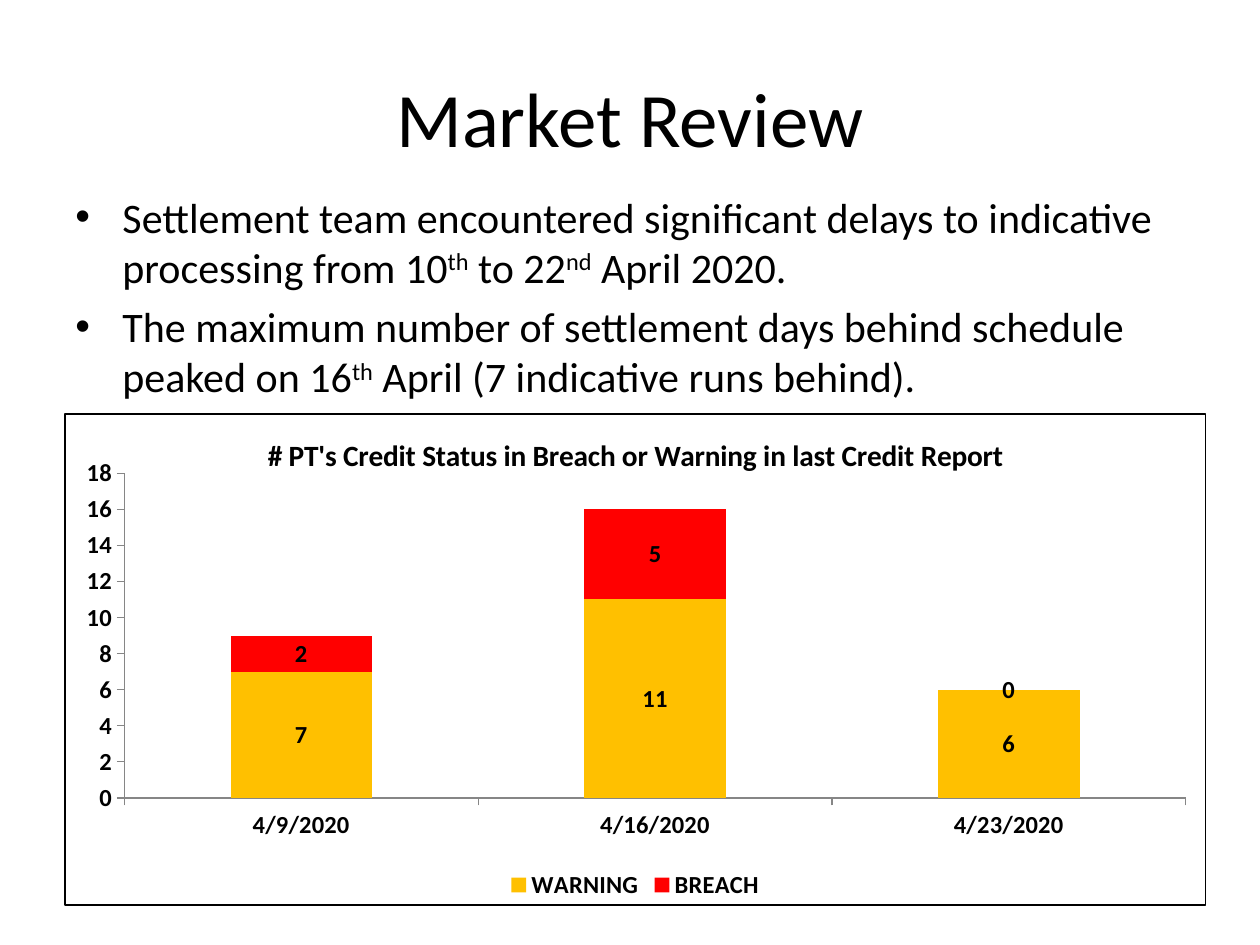
"""Build the Market Review slide with two bullets and a stacked credit chart."""
from lxml import etree
from pptx import Presentation
from pptx.chart.data import CategoryChartData
from pptx.dml.color import RGBColor
from pptx.enum.chart import XL_CHART_TYPE, XL_LEGEND_POSITION, XL_TICK_MARK
from pptx.enum.text import MSO_ANCHOR, PP_ALIGN
from pptx.oxml import parse_xml
from pptx.oxml.ns import nsdecls, qn
from pptx.util import Cm, Pt

STACKED = XL_CHART_TYPE.COLUMN_STACKED
BOTTOM = XL_LEGEND_POSITION.BOTTOM
OUT = XL_TICK_MARK.OUTSIDE
MIDDLE = MSO_ANCHOR.MIDDLE
CENTER, LEFT = PP_ALIGN.CENTER, PP_ALIGN.LEFT

TITLE = "Market Review"
BULLETS = [
    [("Settlement team encountered significant delays to indicative processing from 10", False),
     ("th", True), (" to 22", False), ("nd", True), (" April 2020.", False)],
    [("The maximum number of settlement days behind schedule peaked on 16", False),
     ("th", True), (" April (7 indicative runs behind).", False)],
]
HEAD = "# PT's Credit Status in Breach or Warning in last Credit Report"
DATES = ["4/9/2020", "4/16/2020", "4/23/2020"]
SERIES = [("WARNING", (7, 11, 6), "warn"), ("BREACH", (2, 5, 0), "breach")]

THEME = {
    "font": "Calibri",
    "ink": "000000", "axis": "868686", "warn": "FFC000", "breach": "FF0000",
    "title": 44, "body": 24, "head": 16.8, "chart": 14,
}
BOXES = {
    "title": (1.27, 0.76, 22.86, 3.18),
    "body": (1.27, 3.73, 22.86, 13.28),
    "chart": (1.3, 8.33, 23.01, 9.93),
}
PLOT = {"x": 0.052, "y": 0.121, "w": 0.931, "h": 0.661}
INDENT = Cm(0.95)


def box(name):
    return [Cm(n) for n in BOXES[name]]


def apply(obj, **values):
    for key, value in values.items():
        setattr(obj, key, value)


def style(font, size, bold=False):
    apply(font, name=THEME["font"], size=Pt(THEME[size]), bold=bold)
    font.color.rgb = RGBColor.from_string(THEME["ink"])


def add_title(slide):
    shape = slide.shapes.title
    apply(shape, **dict(zip(("left", "top", "width", "height"), box("title"))))
    frame = shape.text_frame
    apply(frame, text=TITLE, vertical_anchor=MIDDLE)
    para = frame.paragraphs[0]
    para.alignment = CENTER
    style(para.runs[0].font, "title")


def add_bullets(slide):
    frame = slide.shapes.add_textbox(*box("body")).text_frame
    frame.word_wrap = True
    for row, parts in enumerate(BULLETS):
        para = frame.add_paragraph() if row else frame.paragraphs[0]
        apply(para, alignment=LEFT, space_before=Pt(THEME["body"] * 0.2))
        props = para._p.get_or_add_pPr()
        props.set("marL", str(INDENT))
        props.set("indent", str(-INDENT))
        etree.SubElement(props, qn("a:buFont")).set("typeface", "Arial")
        etree.SubElement(props, qn("a:buChar")).set("char", "•")
        for text, raised in parts:
            run = para.add_run()
            run.text = text
            style(run.font, "body")
            if raised:
                run._r.get_or_add_rPr().set("baseline", "30000")


def set_frame(chart):
    root = chart._chartSpace.find(qn("c:chart"))
    root.addnext(parse_xml(
        f'<c:spPr {nsdecls("c", "a")}><a:noFill/><a:ln w="{Pt(0.75)}"><a:solidFill>'
        f'<a:srgbClr val="{THEME["ink"]}"/></a:solidFill></a:ln></c:spPr>'))
    area = root.find(qn("c:plotArea"))
    for old in area.findall(qn("c:layout")):
        area.remove(old)
    layout = etree.Element(qn("c:layout"))
    manual = etree.SubElement(layout, qn("c:manualLayout"))
    modes = {"layoutTarget": "inner", "xMode": "edge", "yMode": "edge"}
    for key, value in {**modes, **PLOT}.items():
        etree.SubElement(manual, qn(f"c:{key}")).set("val", str(value))
    area.insert(0, layout)


def add_chart(slide):
    data = CategoryChartData()
    data.categories = DATES
    for name, values, _ in SERIES:
        data.add_series(name, values)
    chart = slide.shapes.add_chart(STACKED, *box("chart"), data).chart
    style(chart.font, "chart", True)
    frame = chart.chart_title.text_frame
    frame.text = HEAD
    style(frame.paragraphs[0].runs[0].font, "head", True)
    chart.has_legend = True
    apply(chart.legend, position=BOTTOM, include_in_layout=False)
    plot = chart.plots[0]
    apply(plot, gap_width=150, overlap=100, vary_by_categories=False)
    for series, (_, _, color) in zip(plot.series, SERIES):
        series.format.fill.solid()
        series.format.fill.fore_color.rgb = RGBColor.from_string(THEME[color])
        series.data_labels.show_value = True
        style(series.data_labels.font, "chart", True)
    for axis in (chart.category_axis, chart.value_axis):
        apply(axis, major_tick_mark=OUT, has_major_gridlines=False)
        axis.format.line.width = Pt(0.75)
        axis.format.line.color.rgb = RGBColor.from_string(THEME["axis"])
    apply(chart.value_axis, minimum_scale=0, maximum_scale=18, major_unit=2)
    set_frame(chart)


def main():
    deck = Presentation()
    apply(deck, slide_width=Cm(25.4), slide_height=Cm(19.05))
    slide = deck.slides.add_slide(deck.slide_layouts.get_by_name("Title Only"))
    add_title(slide)
    add_bullets(slide)
    add_chart(slide)
    deck.save("out.pptx")


if __name__ == "__main__":
    main()
